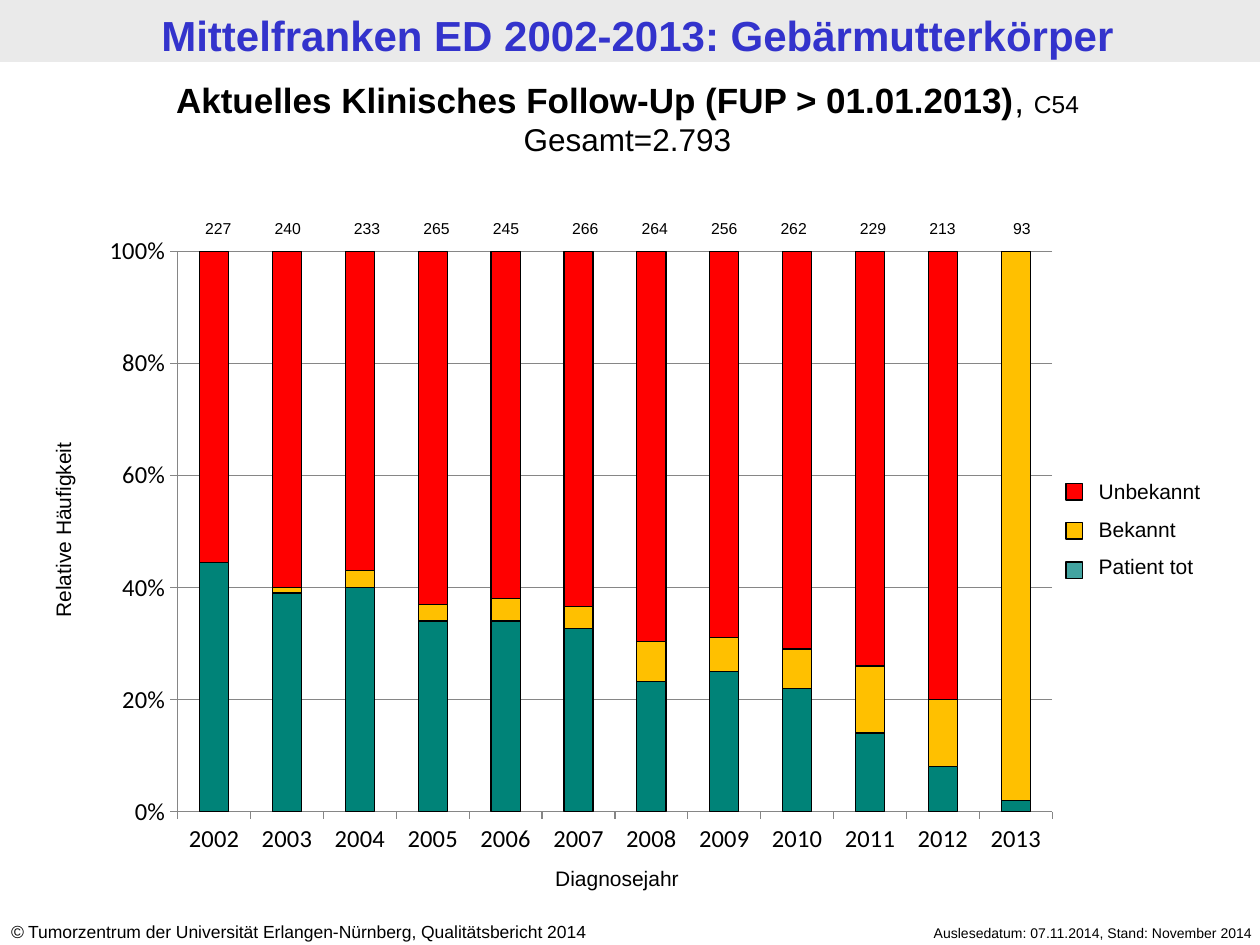
"""Build the follow-up slide on uterine cancer in Mittelfranken."""

from dataclasses import dataclass

from lxml.etree import SubElement
from pptx import Presentation
from pptx.chart.data import CategoryChartData
from pptx.dml.color import RGBColor
from pptx.enum.chart import XL_CHART_TYPE, XL_TICK_MARK
from pptx.enum.shapes import MSO_SHAPE
from pptx.enum.text import MSO_ANCHOR, PP_ALIGN
from pptx.oxml import parse_xml
from pptx.oxml.ns import nsdecls, qn
from pptx.util import Cm, Pt


@dataclass(frozen=True)
class Theme:
    """Colours, fonts and type sizes of the slide."""

    text_font: str = "Arial"
    chart_font: str = "Calibri"
    black: str = "000000"
    title: str = "3333CC"
    band: str = "EAEAEA"
    grid: str = "868686"
    dead: str = "008378"
    dead_key: str = "008380"
    known: str = "FFC000"
    unknown: str = "FF0000"
    title_size: int = 24
    heading_size: int = 20
    total_size: int = 18
    axis_size: int = 14
    label_size: int = 12
    source_size: int = 10
    count_size: int = 9
    date_size: int = 8
    outline: float = 0.75


class SlideBuilder:
    """Holds the theme and the current slide."""

    def __init__(self, slide, theme):
        """Keep the slide and its style."""
        self.slide = slide
        self.theme = theme

    def format_font(self, font, size, color=None, bold=False, italic=False, name=None):
        """Set the look of a font."""
        font.name = name or self.theme.text_font
        font.size = Pt(size)
        font.bold = bold
        font.italic = italic
        font.color.rgb = RGBColor.from_string(color or self.theme.black)

    def outline(self, line, color):
        """Draw a thin line in one colour."""
        line.color.rgb = RGBColor.from_string(color)
        line.width = Pt(self.theme.outline)

    def title(self, text, left, top, width, height):
        """Place and format the title placeholder."""
        title = self.slide.shapes.title
        title.left, title.top, title.width, title.height = map(Cm, (left, top, width, height))
        frame = title.text_frame
        frame.text = text
        frame.vertical_anchor = MSO_ANCHOR.BOTTOM
        frame.margin_top = frame.margin_bottom = Cm(0.1)
        para = frame.paragraphs[0]
        para.alignment = PP_ALIGN.CENTER
        self.format_font(para.runs[0].font, self.theme.title_size, self.theme.title, bold=True)
        return title

    def text(self, paragraphs, left, top, width, height, align=PP_ALIGN.CENTER, gap=0, rotation=0):
        """Add a text box from paragraphs made of (text, font options) spans."""
        box = self.slide.shapes.add_textbox(Cm(left), Cm(top), Cm(width), Cm(height))
        box.rotation = rotation
        frame = box.text_frame
        frame.word_wrap = True
        for index, spans in enumerate(paragraphs):
            para = frame.add_paragraph() if index else frame.paragraphs[0]
            para.alignment = align
            if index:
                para.space_before = Pt(gap)
            for text, options in spans:
                span = para.add_run()
                span.text = text
                self.format_font(span.font, **options)
        return box

    def rectangle(self, color, left, top, width, height, outlined=False, opacity=100):
        """Add a filled rectangle."""
        box = self.slide.shapes.add_shape(
            MSO_SHAPE.RECTANGLE, Cm(left), Cm(top), Cm(width), Cm(height)
        )
        box.shadow.inherit = False
        box.fill.solid()
        box.fill.fore_color.rgb = RGBColor.from_string(color)
        if opacity < 100:
            fill = box.element.spPr.find(qn("a:solidFill"))
            SubElement(fill[0], qn("a:alpha")).set("val", str(opacity * 1000))
        if outlined:
            self.outline(box.line, self.theme.black)
        else:
            box.line.fill.background()
        return box

    def stacked_chart(self, categories, series, left, top, width, height, inner):
        """Add a 100 % stacked column chart with a fixed inner plot area."""
        data = CategoryChartData()
        data.categories = categories
        for name, _, values in series:
            data.add_series(name, values)
        chart = self.slide.shapes.add_chart(
            XL_CHART_TYPE.COLUMN_STACKED_100, Cm(left), Cm(top), Cm(width), Cm(height), data
        ).chart
        chart.has_title = False
        chart.has_legend = False
        self.format_font(chart.font, self.theme.axis_size, name=self.theme.chart_font)
        plot = chart.plots[0]
        plot.gap_width, plot.overlap = 150, 100
        plot.vary_by_categories = False
        for drawn, (_, color, _) in zip(plot.series, series):
            drawn.format.fill.solid()
            drawn.format.fill.fore_color.rgb = RGBColor.from_string(color)
            self.outline(drawn.format.line, self.theme.black)
        for axis in (chart.category_axis, chart.value_axis):
            axis.major_tick_mark = XL_TICK_MARK.OUTSIDE
            axis.minor_tick_mark = XL_TICK_MARK.NONE
            self.outline(axis.format.line, self.theme.grid)
        scale = chart.value_axis
        scale.minimum_scale, scale.maximum_scale, scale.major_unit = 0, 1, 0.2
        scale.tick_labels.number_format = "0%"
        scale.tick_labels.number_format_is_linked = False
        scale.has_major_gridlines = True
        self.outline(scale.major_gridlines.format.line, self.theme.grid)
        self.fix_plot_area(chart, inner)

    def fix_plot_area(self, chart, inner):
        """Set the inner plot area as fractions of the chart."""
        area = chart.element.find(".//" + qn("c:plotArea"))
        for layout in area.findall(qn("c:layout")):
            area.remove(layout)
        modes = "".join(f'<c:{key}Mode val="edge"/>' for key in "xy")
        sizes = "".join(f'<c:{key} val="{value}"/>' for key, value in zip("xywh", inner))
        area.insert(0, parse_xml(
            f'<c:layout {nsdecls("c")}><c:manualLayout><c:layoutTarget val="inner"/>'
            f"{modes}{sizes}</c:manualLayout></c:layout>"
        ))


def main():
    """Build and save the deck."""
    theme = Theme()
    deck = Presentation()
    deck.slide_width, deck.slide_height = Cm(25.4), Cm(19.05)
    page = SlideBuilder(deck.slides.add_slide(deck.slide_layouts[5]), theme)

    title = page.title("Mittelfranken ED 2002-2013: Gebärmutterkörper", 0.15, 0.05, 25.4, 1.25)
    band = page.rectangle(theme.band, 0, 0, 25.4, 1.25)
    title.element.addprevious(band.element)

    date = {"size": theme.date_size}
    page.text([[("Auslesedatum: 07.11.2014, Stand: November 2014", date)]],
              16.89, 18.52, 8.61, 0.6, PP_ALIGN.RIGHT)
    source = {"size": theme.source_size}
    page.text([[("©", {**source, "italic": True}),
                (" Tumorzentrum der Universität Erlangen-Nürnberg, Qualitätsbericht 2014", source)]],
              -0.03, 18.44, 13.3, 0.7, PP_ALIGN.LEFT)

    series = [
        ("Patient tot", theme.dead, (44, 39, 40, 34, 34, 33, 23, 25, 22, 14, 8, 2)),
        ("Bekannt", theme.known, (0, 1, 3, 3, 4, 4, 7, 6, 7, 12, 12, 98)),
        ("Unbekannt", theme.unknown, (55, 60, 57, 63, 62, 64, 69, 69, 71, 74, 80, 0)),
    ]
    years = [str(year) for year in range(2002, 2014)]
    page.stacked_chart(years, series, 1.8, 4.55, 19.81, 12.98, (0.09, 0.04, 0.89, 0.87))

    label = {"size": theme.label_size}
    page.text([[("Relative Häufigkeit", label)]], -1.78, 10.29, 6.12, 0.79, rotation=270)
    page.text([[("Diagnosejahr", label)]], 9.58, 17.32, 5.72, 0.79)
    heading = {"size": theme.heading_size}
    page.text([[("Aktuelles Klinisches Follow-Up (FUP > 01.01.2013)", {**heading, "bold": True}),
                (", ", heading), ("C54", {"size": theme.axis_size})],
               [("Gesamt=2.793", {"size": theme.total_size})]], -0.1, 1.45, 25.5, 1.88)

    counts = (227, 240, 233, 265, 245, 266, 264, 256, 262, 229, 213, 93)
    lefts = (3.7, 5.1, 6.7, 8.1, 9.5, 11.1, 12.5, 13.9, 15.3, 16.9, 18.3, 19.9)
    for count, left in zip(counts, lefts):
        page.text([[(str(count), {"size": theme.count_size})]], left, 4.28, 1.4, 0.64)

    names = [[(name, label)] for name, _, _ in reversed(series)]
    page.text(names, 21.9, 9.53, 3.6, 2.31, PP_ALIGN.LEFT, gap=7)
    keys = ((theme.unknown, 100), (theme.known, 100), (theme.dead_key, 74))
    for index, (color, opacity) in enumerate(keys):
        page.rectangle(color, 21.49, 9.75 + 0.79 * index, 0.33, 0.33, True, opacity)

    deck.save("out.pptx")


if __name__ == "__main__":
    main()
